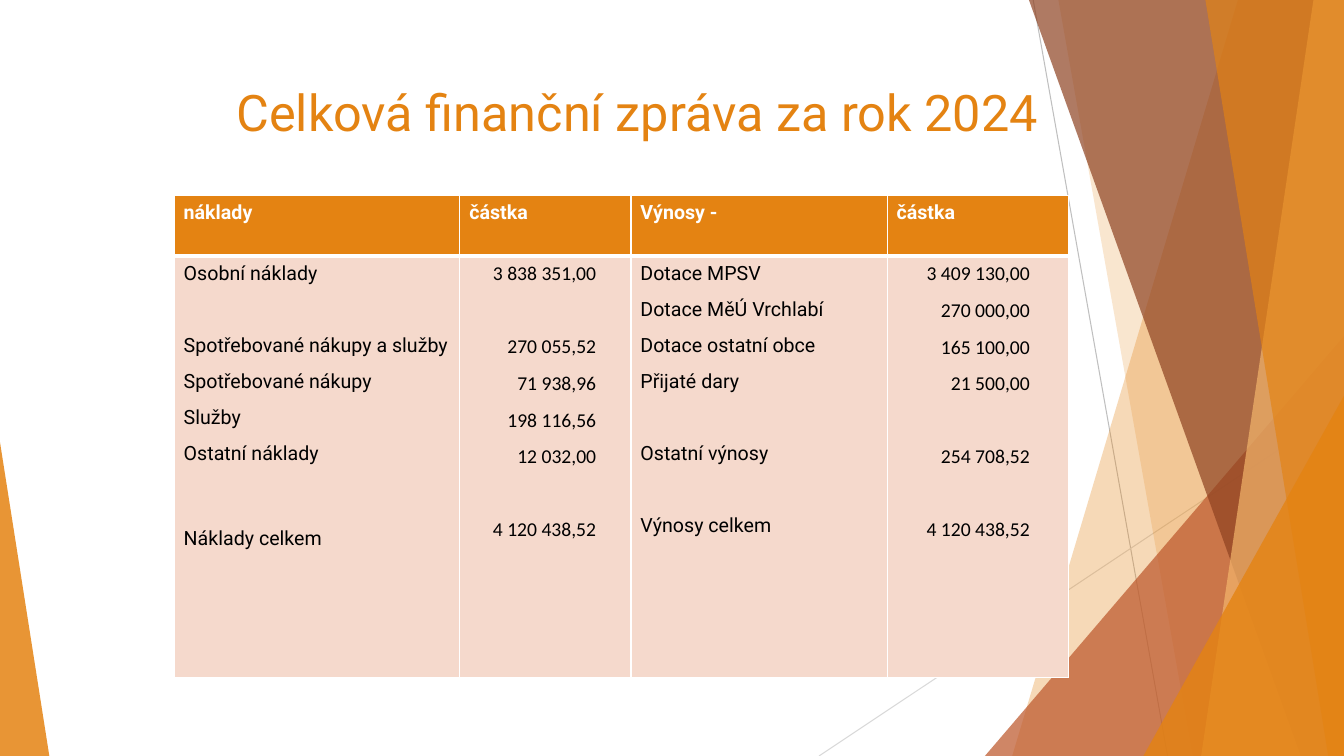
import dataclasses

import pptx
import pptx.dml.color
import pptx.enum.shapes
import pptx.enum.text
import pptx.oxml
import pptx.oxml.ns
import pptx.util


@dataclasses.dataclass(frozen=True)
class Theme:
    orange: str = "E48312"
    rust: str = "BD582C"
    brown: str = "8E4221"
    peach: str = "F3B56C"
    pink: str = "F5D9CC"
    white: str = "FFFFFF"
    black: str = "000000"
    gray: str = "BFBFBF"
    pale: str = "D9D9D9"
    font: str = "Roboto"
    digits: str = "Calibri"
    title: int = 36
    body: int = 14
    skip: int = 26
    total: int = 35
    after: int = 8
    lead: float = 1.07


class Painter:
    """Draw styled elements on one slide, with lengths in px."""

    unit = 9525

    def __init__(self, theme, slide):
        self.theme = theme
        self.slide = slide
        self.shapes = slide.shapes

    def px(self, *sizes):
        return [pptx.util.Emu(size * self.unit) for size in sizes]

    def rgb(self, color):
        return pptx.dml.color.RGBColor.from_string(color)

    def node(self, xml):
        return pptx.oxml.parse_xml(xml.format(pptx.oxml.ns.nsdecls("a")))

    def paint(self, shape, color, alpha):
        shape.shadow.inherit = False
        shape.line.fill.background()
        shape.fill.solid()
        shape.fill.fore_color.rgb = self.rgb(color)
        fill = shape._element.spPr.find(pptx.oxml.ns.qn("a:solidFill"))
        fill[0].append(self.node(f'<a:alpha {{}} val="{alpha * 1000}"/>'))

    def line(self, start, end, color):
        kind = pptx.enum.shapes.MSO_CONNECTOR.STRAIGHT
        line = self.shapes.add_connector(kind, *self.px(*start, *end))
        line.line.color.rgb = self.rgb(color)
        line.line.width = pptx.util.Pt(0.75)
        line._element.spPr.append(self.node("<a:effectLst {}/>"))

    def band(self, top, foot, color, alpha):
        form = self.shapes.build_freeform(top, 0, scale=self.unit)
        form.add_line_segments([(1280, 0), (1280, 720), (foot, 720)])
        self.paint(form.convert_to_shape(), color, alpha)

    def wedge(self, box, peak, color, alpha):
        kind = pptx.enum.shapes.MSO_SHAPE.ISOSCELES_TRIANGLE
        shape = self.shapes.add_shape(kind, *self.px(*box))
        shape.adjustments[0] = peak
        self.paint(shape, color, alpha)

    def label(self, para, text, font, size, color, bold=False):
        para.text = text
        para.font.name = font
        para.font.size = pptx.util.Pt(size)
        para.font.bold = bold
        para.font.color.rgb = self.rgb(color)

    def title(self, box, text):
        frame = self.shapes.add_textbox(*self.px(*box)).text_frame
        frame.word_wrap = True
        para = frame.paragraphs[0]
        para.alignment = pptx.enum.text.PP_ALIGN.CENTER
        self.label(para, text, self.theme.font, self.theme.title, self.theme.orange)

    def cell(self, cell, lines, fill, color, bold=False, pad=9, foot=1):
        theme = self.theme
        cell.margin_left, cell.margin_right = self.px(9, pad)
        cell.margin_top, cell.margin_bottom = self.px(4, 4)
        props = cell._tc.get_or_add_tcPr()
        for side, width in zip("LRTB", (1, 1, 1, foot)):
            props.append(self.node(
                f'<a:ln{side} {{}} w="{width * 12700}"><a:solidFill>'
                f'<a:srgbClr val="{theme.white}"/></a:solidFill></a:ln{side}>'))
        cell.fill.solid()
        cell.fill.fore_color.rgb = self.rgb(fill)
        frame = cell.text_frame
        right = pad > 9
        for index, (text, gap) in enumerate(lines):
            para = frame.add_paragraph() if index else frame.paragraphs[0]
            if right:
                para.alignment = pptx.enum.text.PP_ALIGN.RIGHT
            para.line_spacing = theme.lead
            para.space_before = pptx.util.Pt(gap)
            para.space_after = pptx.util.Pt(theme.after)
            face = theme.digits if right else theme.font
            self.label(para, text, face, theme.body, color, bold)

    def table(self, spot, heights, columns):
        theme = self.theme
        widths = [column[1] for column in columns]
        size = sum(widths), sum(heights)
        table = self.shapes.add_table(
            2, len(columns), *self.px(*spot, *size)).table
        table.horz_banding = False
        for row, height in zip(table.rows, self.px(*heights)):
            row.height = height
        for index, (head, width, pad, lines) in enumerate(columns):
            table.columns[index].width = self.px(width)[0]
            self.cell(table.cell(0, index), [(head, 0)], theme.orange,
                      theme.white, bold=True, foot=3)
            self.cell(table.cell(1, index), lines, theme.pink,
                      theme.black, pad=pad)


def main():
    deck = pptx.Presentation()
    theme = Theme()
    art = Painter(theme, deck.slides.add_slide(deck.slide_layouts[6]))
    deck.slide_width, deck.slide_height = art.px(1280, 720)

    art.line((984, 0), (1112, 720), theme.gray)
    art.line((1280, 387), (780, 720), theme.pale)
    art.band(1179, 964, theme.orange, 30)
    art.band(1008, 1136, theme.orange, 20)
    art.wedge((938, 320, 342, 400), 1, theme.rust, 72)
    art.band(980, 1239, theme.brown, 70)
    art.band(1251, 1144, theme.peach, 70)
    art.band(1148, 1265, theme.orange, 65)
    art.wedge((1089, 377, 191, 343), 1, theme.orange, 80)
    art.wedge((0, 421, 47, 299), 0, theme.orange, 85)

    art.title((136, 73, 942, 112), "Celková finanční zpráva za rok 2024")
    skip = theme.skip
    costs = [("Osobní náklady", 0), ("Spotřebované nákupy a služby", skip),
             ("Spotřebované nákupy", 0), ("Služby", 0),
             ("Ostatní náklady", 0), ("Náklady celkem", theme.total)]
    spent = [("3 838 351,00", 0), ("270 055,52", skip), ("71 938,96", 0),
             ("198 116,56", 0), ("12 032,00", 0), ("4 120 438,52", skip)]
    yields = [("Dotace MPSV", 0), ("Dotace MěÚ Vrchlabí", 0),
              ("Dotace ostatní obce", 0), ("Přijaté dary", 0),
              ("Ostatní výnosy", skip), ("Výnosy celkem", skip)]
    gained = [("3 409 130,00", 0), ("270 000,00", 0), ("165 100,00", 0),
              ("21 500,00", 0), ("254 708,52", skip), ("4 120 438,52", skip)]
    art.table((166, 186), (58, 401), [
        ("náklady", 272, 9, costs), ("částka", 163, 33, spent),
        ("Výnosy -", 244, 9, yields), ("částka", 173, 37, gained)])
    deck.save("out.pptx")


if __name__ == "__main__":
    main()
